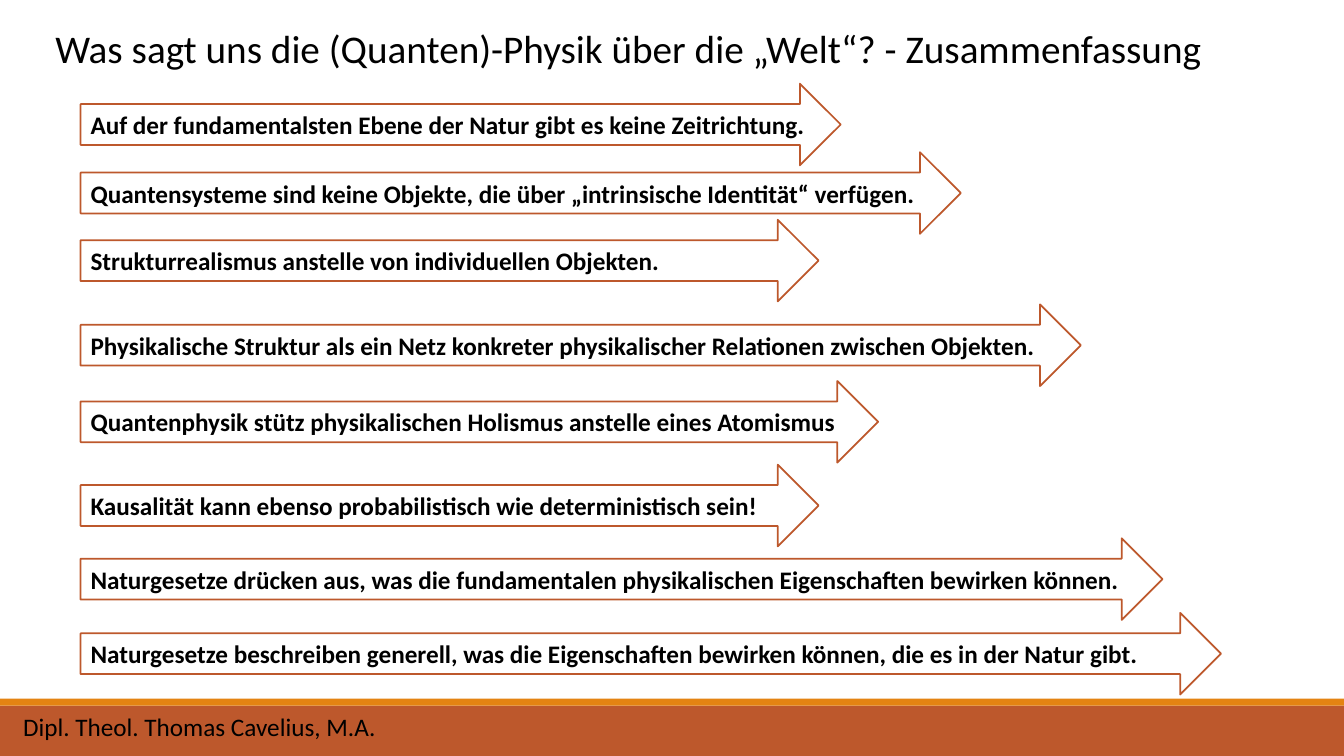
from dataclasses import dataclass

from pptx import Presentation
from pptx.dml.color import RGBColor
from pptx.enum.shapes import MSO_SHAPE
from pptx.enum.text import MSO_ANCHOR, MSO_AUTO_SIZE, PP_ALIGN
from pptx.shapes.autoshape import Shape
from pptx.slide import Slide
from pptx.util import Inches, Pt

RECTANGLE = MSO_SHAPE.RECTANGLE
RIGHT_ARROW = MSO_SHAPE.RIGHT_ARROW
MIDDLE = MSO_ANCHOR.MIDDLE
LEFT = PP_ALIGN.LEFT
FIT_SHAPE = MSO_AUTO_SIZE.SHAPE_TO_FIT_TEXT

SLIDE_WIDTH = Inches(13.33)
SLIDE_HEIGHT = Inches(7.5)
FONT = "Calibri"
BLACK, WHITE, RUST, ORANGE = "000000", "FFFFFF", "BD582C", "E48312"


@dataclass(frozen=True)
class Area:
    """A rectangle in percent of the slide's width and height."""
    left: float
    top: float
    width: float
    height: float

    def lengths(self) -> tuple[int, int, int, int]:
        return (
            round(SLIDE_WIDTH * self.left / 100),
            round(SLIDE_HEIGHT * self.top / 100),
            round(SLIDE_WIDTH * self.width / 100),
            round(SLIDE_HEIGHT * self.height / 100),
        )


@dataclass(frozen=True)
class Thesis:
    top: float
    width: float
    text: str


ARROW_LEFT = 6
ARROW_HEIGHT = 10.8
THESES = [
    Thesis(11.07, 56.56, "Auf der fundamentalsten Ebene der Natur gibt es keine Zeitrichtung."),
    Thesis(20.13, 65.49, "Quantensysteme sind keine Objekte, die über „intrinsische Identität“ verfügen."),
    Thesis(29.07, 54.91, "Strukturrealismus anstelle von individuellen Objekten."),
    Thesis(40.27, 74.42, "Physikalische Struktur als ein Netz konkreter physikalischer Relationen zwischen Objekten."),
    Thesis(50.4, 59.34, "Quantenphysik stütz physikalischen Holismus anstelle eines Atomismus"),
    Thesis(61.47, 54.91, "Kausalität kann ebenso probabilistisch wie deterministisch sein!"),
    Thesis(71.2, 80.5, "Naturgesetze drücken aus, was die fundamentalen physikalischen Eigenschaften bewirken können."),
    Thesis(81.07, 84.85, "Naturgesetze beschreiben generell, was die Eigenschaften bewirken können, die es in der Natur gibt."),
]


def color(value: str) -> RGBColor:
    return RGBColor.from_string(value)


def write(box: Shape, text: str, *, size: float = 18, bold: bool = False) -> None:
    box.text_frame.word_wrap = True
    para = box.text_frame.paragraphs[0]
    para.alignment = LEFT
    span = para.add_run()
    span.text = text
    span.font.name = FONT
    span.font.size = Pt(size)
    span.font.bold = bold
    span.font.color.rgb = color(BLACK)


def add_text(page: Slide, area: Area, text: str, *, size: float = 18) -> None:
    box = page.shapes.add_textbox(*area.lengths())
    write(box, text, size=size)
    box.text_frame.auto_size = FIT_SHAPE


def add_filled(page: Slide, kind: MSO_SHAPE, area: Area, fill: str) -> Shape:
    """Add a preset shape with a plain fill, no outline and no shadow."""
    shape = page.shapes.add_shape(kind, *area.lengths())
    shape.shadow.inherit = False
    shape.fill.solid()
    shape.fill.fore_color.rgb = color(fill)
    shape.line.fill.background()
    return shape


def add_thesis(page: Slide, thesis: Thesis) -> None:
    area = Area(ARROW_LEFT, thesis.top, thesis.width, ARROW_HEIGHT)
    arrow = add_filled(page, RIGHT_ARROW, area, WHITE)
    arrow.line.color.rgb = color(RUST)
    arrow.line.width = Pt(1.25)
    arrow.text_frame.vertical_anchor = MIDDLE
    write(arrow, thesis.text, bold=True)


def main() -> None:
    deck = Presentation()
    deck.slide_width = SLIDE_WIDTH
    deck.slide_height = SLIDE_HEIGHT
    page = deck.slides.add_slide(deck.slide_layouts[6])

    add_filled(page, RECTANGLE, Area(0, 93.33, 100, 6.67), RUST)
    add_filled(page, RECTANGLE, Area(0, 92.4, 100, 0.93), ORANGE)
    add_text(page, Area(0.98, 93.47, 28.2, 5.33), "Dipl. Theol. Thomas Cavelius, M.A.")
    add_text(
        page,
        Area(3.38, 2.53, 87.6, 7.6),
        "Was sagt uns die (Quanten)-Physik über die „Welt“? - Zusammenfassung",
        size=28,
    )
    for thesis in THESES:
        add_thesis(page, thesis)

    deck.save("out.pptx")


if __name__ == "__main__":
    main()
